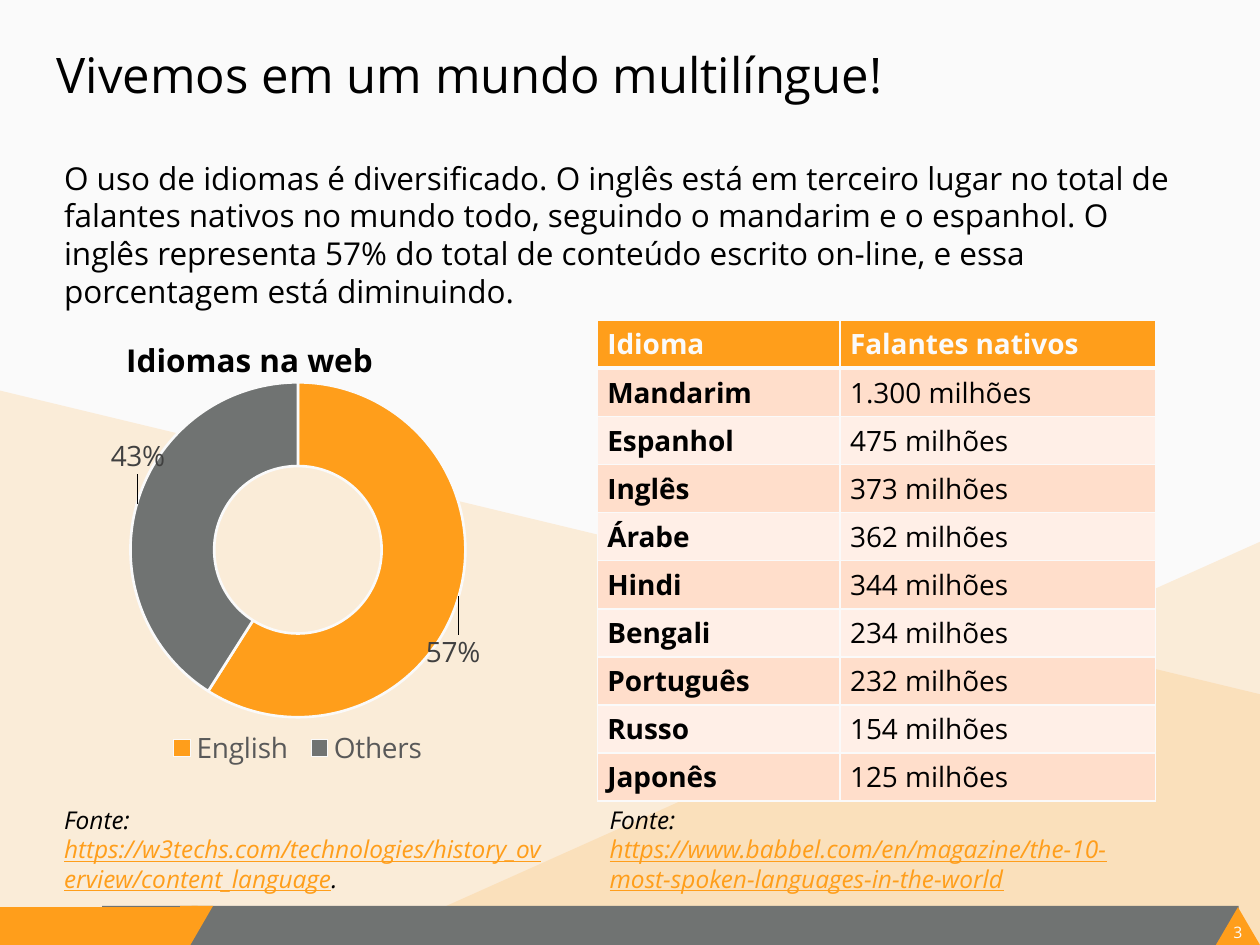
import pptx
import pptx.chart.data
import pptx.dml.color
import pptx.enum.chart
import pptx.enum.shapes
import pptx.enum.text
import pptx.oxml
import pptx.oxml.ns
import pptx.util
import lxml.etree

COLS, ROWS = 100, 75
FONT = "Open Sans"
GOLD, GRAY, PALE, INK = "FF9E1B", "707372", "FAFAFA", "000000"
KINDS = pptx.enum.shapes.MSO_SHAPE
qn = pptx.oxml.ns.qn

deck = pptx.Presentation()
deck.slide_width = pptx.util.Inches(10)
deck.slide_height = pptx.util.Inches(7.5)
UNIT = deck.slide_width / COLS


def grid(*cells):
    """Turn grid cells into slide lengths."""
    return [pptx.util.Emu(round(cell * UNIT)) for cell in cells]


def rgb(code):
    """Read a hex colour."""
    return pptx.dml.color.RGBColor.from_string(code)


def paint(fill, code, alpha=None):
    """Fill with one colour, see-through if alpha is given in percent."""
    fill.solid()
    fill.fore_color.rgb = rgb(code)
    if alpha:
        tone = fill._xPr.find(".//" + qn("a:srgbClr"))
        lxml.etree.SubElement(tone, qn("a:alpha"), val=str(alpha * 1000))


def style(font, size, code=INK, bold=False, slant=False):
    """Set the look of a font."""
    font.name, font.size = FONT, pptx.util.Pt(size)
    font.bold, font.italic = bold, slant
    font.color.rgb = rgb(code)


def plain(shape, code, alpha=None):
    """Give a shape a flat fill without line or shadow."""
    shape.shadow.inherit = False
    shape.line.fill.background()
    paint(shape.fill, code, alpha)


def facet(slide, points):
    """Draw one see-through area of the backdrop."""
    spots = [tuple(grid(*point)) for point in points]
    form = slide.shapes.build_freeform(*spots[0])
    form.add_line_segments(spots[1:], close=True)
    plain(form.convert_to_shape(), GOLD, 15)


def block(slide, kind, box, code):
    """Place one flat preset shape."""
    shape = slide.shapes.add_shape(kind, *grid(*box))
    plain(shape, code)
    return shape


def text(slide, box, words, size, **look):
    """Place a wrapped text box with one paragraph."""
    frame = slide.shapes.add_textbox(*grid(*box)).text_frame
    frame.word_wrap = True
    line = frame.paragraphs[0]
    line.add_run().text = words
    style(line.font, size, **look)
    return line


def footer(slide, top, page):
    """Draw the bottom band with its page number."""
    high = ROWS - top
    block(slide, KINDS.RECTANGLE, (8.1, top - 0.1, 90.2, high + 0.1), GRAY)
    block(slide, KINDS.RECTANGLE, (0, top, 15, high), GOLD)
    block(slide, KINDS.ISOSCELES_TRIANGLE, (96.5, top, 3.5, high), GOLD)
    slant = block(slide, KINDS.PARALLELOGRAM, (13.4, top - 0.1, 3.5, high + 0.1), GOLD)
    slant.adjustments[0] = 0.58
    slant.rotation = 180
    block(slide, KINDS.RECTANGLE, (14.3, top - 0.1, 1.4, 1.3), GOLD)
    line = text(slide, (97.4, top + 1.2, 1.7, 1.5), page, 9, code=PALE)
    line.alignment = pptx.enum.text.PP_ALIGN.CENTER
    frame = slide.shapes[-1].text_frame
    frame.margin_left = frame.margin_right = frame.margin_top = frame.margin_bottom = 0


def title(slide, box, words):
    """Move and format the title placeholder."""
    shape = slide.shapes.title
    shape.left, shape.top, shape.width, shape.height = grid(*box)
    frame = shape.text_frame
    frame.text = words
    frame.auto_size = pptx.enum.text.MSO_AUTO_SIZE.NONE
    frame.vertical_anchor = pptx.enum.text.MSO_ANCHOR.TOP
    line = frame.paragraphs[0]
    line.alignment = pptx.enum.text.PP_ALIGN.LEFT
    style(line.font, 28)


def source(slide, box, link, tail=""):
    """Write a source note with its underlined address."""
    line = text(slide, box, "Fonte: ", 14, slant=True)
    run = line.add_run()
    run.text = link
    run.font.underline = True
    run.font.color.rgb = rgb(GOLD)
    if tail:
        line.add_run().text = tail


def edge(cell, **widths):
    """Line the cell's sides with the given widths in points."""
    props = cell._tc.get_or_add_tcPr()
    for spot, side in enumerate("LRTB"):
        line = pptx.oxml.parse_xml(
            f'<a:ln{side} {pptx.oxml.ns.nsdecls("a")} w="{widths.get(side, 1) * 12700}">'
            f'<a:solidFill><a:srgbClr val="{PALE}"/></a:solidFill></a:ln{side}>')
        props.insert(spot, line)


def table(slide, box, shares, rows):
    """Build the banded table of languages."""
    grid_box = grid(*box)
    body = slide.shapes.add_table(len(rows), len(shares), *grid_box).table
    for col, share in zip(body.columns, shares):
        col.width = round(grid_box[2] * share)
    for r, row in enumerate(rows):
        for c, words in enumerate(row):
            cell = body.cell(r, c)
            cell.text = words
            cell.vertical_anchor = pptx.enum.text.MSO_ANCHOR.MIDDLE
            cell.margin_left, cell.margin_right, cell.margin_top, cell.margin_bottom = grid(
                0.8, 0.8, 0.4, 0.4)
            paint(cell.fill, ("FFEFE7", "FFDECB")[r % 2] if r else GOLD)
            style(cell.text_frame.paragraphs[0].font, 16, INK if r else PALE, not (r and c))
            edge(cell, T=3 if r == 1 else 1, B=1 if r else 3)


def layout(parent, spot, inner=False, **shares):
    """Place a chart part by shares of the chart's size."""
    old = parent.find(qn("c:layout"))
    if old is not None:
        parent.remove(old)
    marks = '<c:layoutTarget val="inner"/>' if inner else ""
    if parent.tag != qn("c:dLbl"):
        marks += '<c:xMode val="edge"/><c:yMode val="edge"/>'
    marks += "".join(f'<c:{key} val="{val}"/>' for key, val in shares.items())
    parent.insert(spot, pptx.oxml.parse_xml(
        f'<c:layout {pptx.oxml.ns.nsdecls("c")}><c:manualLayout>{marks}'
        '</c:manualLayout></c:layout>'))


def ring(slide, box, name, slices):
    """Build the doughnut chart; slices hold name, value, label, colour and label shift."""
    data = pptx.chart.data.CategoryChartData()
    data.categories = [part[0] for part in slices]
    data.add_series("Series 1", [part[1] for part in slices])
    chart = slide.shapes.add_chart(
        pptx.enum.chart.XL_CHART_TYPE.DOUGHNUT, *grid(*box), data).chart
    chart.font.name, chart.font.size = "Arial", pptx.util.Pt(10)
    chart.has_title = chart.has_legend = True
    head = chart.chart_title
    head.text_frame.text = name
    style(head.text_frame.paragraphs[0].font, 18, bold=True)
    layout(head._element, 1, x=0.14, y=0)
    legend = chart.legend
    legend.position = pptx.enum.chart.XL_LEGEND_POSITION.BOTTOM
    legend.include_in_layout = False
    style(legend.font, 16, "595959")
    layout(legend._element, 1, x=0.22, y=0.88, w=0.56, h=0.1)
    plot = chart.plots[0]
    plot.vary_by_categories = True
    plot._element.find(qn("c:holeSize")).set("val", "75")
    layout(plot._element.getparent(), 0, True, x=0.16, y=0.1, w=0.68, h=0.78)
    row = plot.series[0]
    row.data_labels.show_value = True
    style(row.data_labels.font, 16, "404040")
    for spot, (_, _, label, code, (x, y)) in enumerate(slices):
        point = row.points[spot]
        paint(point.format.fill, code)
        point.format.line.color.rgb = rgb(PALE)
        point.format.line.width = pptx.util.Pt(1.5)
        frame = point.data_label.text_frame
        frame.text = label
        style(frame.paragraphs[0].font, 16, "404040")
        layout(row.data_labels._element.findall(qn("c:dLbl"))[spot], 1, x=x, y=y)


def main():
    """Build the slide and save it."""
    slide = deck.slides.add_slide(deck.slide_layouts[5])
    paint(slide.background.fill, PALE)
    facet(slide, [(0, 31), (COLS, 55.1), (COLS, ROWS), (0, ROWS)])
    facet(slide, [(COLS, 43), (COLS, ROWS), (28.5, ROWS)])
    footer(slide, 72, "3")
    title(slide, (3.5, 3, 92.3, 12.5), "Vivemos em um mundo multilíngue!")
    table(slide, (47.4, 25.4, 44.3, 38.2), (0.435, 0.565), [
        ("Idioma", "Falantes nativos"), ("Mandarim", "1.300 milhões"),
        ("Espanhol", "475 milhões"), ("Inglês", "373 milhões"),
        ("Árabe", "362 milhões"), ("Hindi", "344 milhões"),
        ("Bengali", "234 milhões"), ("Português", "232 milhões"),
        ("Russo", "154 milhões"), ("Japonês", "125 milhões")])
    source(slide, (47.4, 63.4, 44.3, 8.1),
           "https://www.babbel.com/en/magazine/the-10-most-spoken-languages-in-the-world")
    source(slide, (4.1, 63.4, 40.8, 8.1),
           "https://w3techs.com/technologies/history_overview/content_language", ".")
    ring(slide, (4.1, 26.1, 39.1, 35.8), "Idiomas na web", [
        ("English", 59, "57%", GOLD, (0.07, 0.15)),
        ("Others", 41, "43%", GRAY, (-0.08, -0.13))])
    text(slide, (4.1, 12.1, 90.8, 10.1),
         "O uso de idiomas é diversificado. O inglês está em terceiro lugar no total de "
         "falantes nativos no mundo todo, seguindo o mandarim e o espanhol. O inglês "
         "representa 57% do total de conteúdo escrito on-line, e essa porcentagem está "
         "diminuindo.", 18)
    deck.save("out.pptx")


if __name__ == "__main__":
    main()
